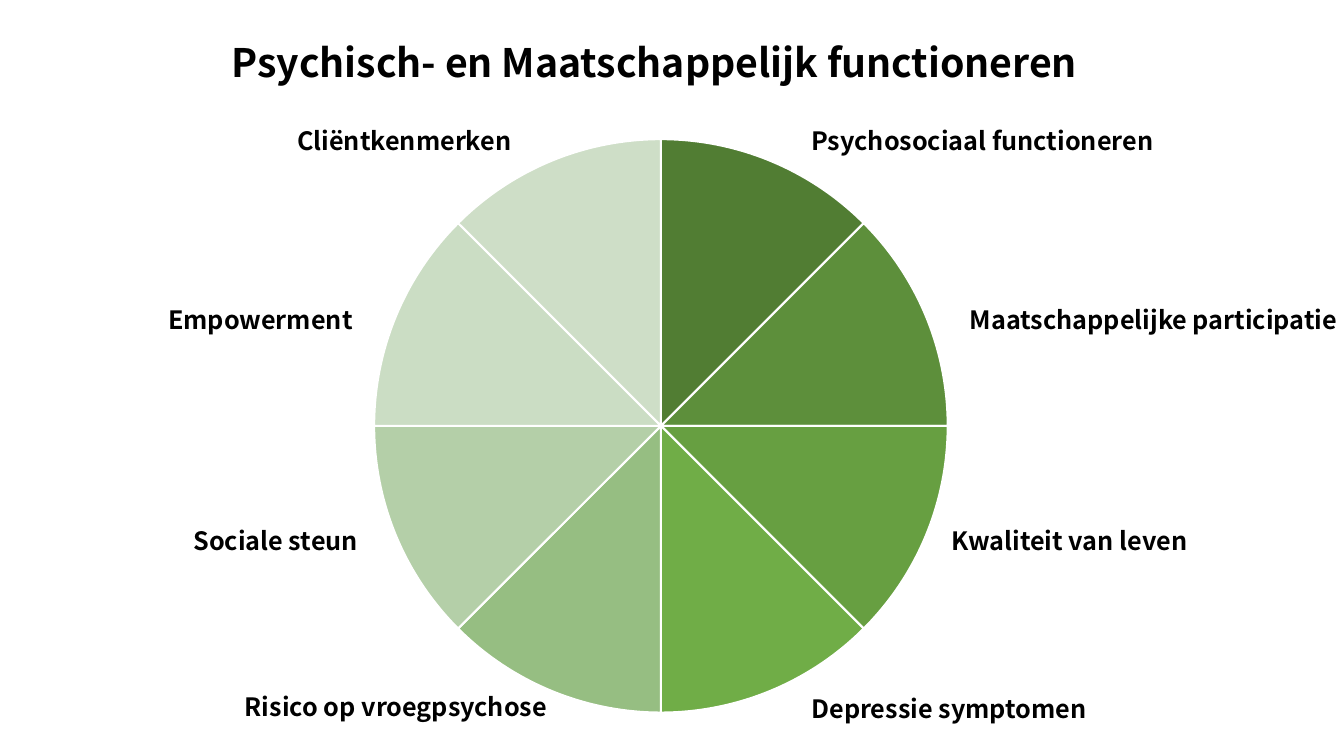
from dataclasses import dataclass
from lxml.etree import SubElement
from pptx import Presentation
from pptx.chart.data import CategoryChartData as Data
from pptx.dml.color import RGBColor as Rgb
from pptx.enum.chart import XL_CHART_TYPE as Kind
from pptx.enum.text import MSO_ANCHOR as Anchor, MSO_AUTO_SIZE as Fit, PP_ALIGN as Align
from pptx.oxml.ns import qn
from pptx.util import Inches, Pt


@dataclass(frozen=True)
class Theme:
    font: str = "Noto Sans CJK TC"
    base: str = "Calibri"
    ink: str = "000000"
    edge: str = "FFFFFF"
    head: int = 28
    label: int = 18
    small: int = 10
    line: float = 1.5
    greens: tuple = ("517D33", "5D8F3B", "679F41", "70AD47",
                     "96BE82", "B4CFA8", "CBDDC4", "CEDEC7")


class Deck:
    def __init__(self, theme):
        self.theme = theme
        self.show = Presentation()
        self.show.slide_width = Inches(13.33)
        self.show.slide_height = Inches(7.5)
        self.slide = self.show.slides.add_slide(self.show.slide_layouts[5])

    def place(self, left, top, width, height):
        across = self.show.slide_width / 100
        down = self.show.slide_height / 100
        return [int(n) for n in (left * across, top * down, width * across, height * down)]

    def style(self, shape, text, size):
        frame = shape.text_frame
        frame.text = text
        frame.word_wrap = True
        frame.auto_size = Fit.NONE
        frame.vertical_anchor = Anchor.MIDDLE
        frame.margin_right = 0
        line = frame.paragraphs[0]
        line.alignment = Align.LEFT
        font = line.runs[0].font
        font.name = self.theme.font
        font.size = Pt(size)
        font.bold = True
        font.color.rgb = Rgb.from_string(self.theme.ink)

    def title(self, text, *box):
        shape = self.slide.shapes.title
        shape.left, shape.top, shape.width, shape.height = self.place(*box)
        self.style(shape, text, self.theme.head)

    def label(self, text, *box):
        shape = self.slide.shapes.add_textbox(*self.place(*box))
        self.style(shape, text, self.theme.label)

    def pie(self, value, plot, *box):
        greens = self.theme.greens
        data = Data()
        data.categories = [str(n + 1) for n in range(len(greens))]
        data.add_series("Series 1", [value] * len(greens))
        chart = self.slide.shapes.add_chart(Kind.PIE, *self.place(*box), data).chart
        chart.has_legend = False
        chart.has_title = False
        chart.font.name = self.theme.base
        chart.font.size = Pt(self.theme.small)
        chart.font.color.rgb = Rgb.from_string(self.theme.ink)
        for index, green in enumerate(greens):
            form = chart.plots[0].series[0].points[index].format
            form.fill.solid()
            form.fill.fore_color.rgb = Rgb.from_string(green)
            form.line.color.rgb = Rgb.from_string(self.theme.edge)
            form.line.width = Pt(self.theme.line)
        self.inset(chart, plot)

    def inset(self, chart, plot):
        area = chart._chartSpace.find(".//" + qn("c:plotArea"))
        for old in area.findall(qn("c:layout")):
            area.remove(old)
        layout = SubElement(area, qn("c:layout"))
        area.insert(0, layout)
        manual = SubElement(layout, qn("c:manualLayout"))
        rules = [("layoutTarget", "inner"), ("xMode", "edge"), ("yMode", "edge")]
        for tag, val in rules + list(zip("xywh", plot)):
            SubElement(manual, qn("c:" + tag)).set("val", str(val))


def main():
    deck = Deck(Theme())
    deck.title("Psychisch- en Maatschappelijk functioneren", 16.5, 4.4, 81.32, 7.6)
    deck.pie(12, (0.17, 0.01, 0.64, 0.97), 16.5, 17.2, 66.69, 79.07)
    tall, wide = 5.33, 28.5
    rows = (15.87, 39.6, 68.8, 91.07)
    right = (("Psychosociaal functioneren", 59.64),
             ("Maatschappelijke participatie", 71.42),
             ("Kwaliteit van leven", 70.07),
             ("Depressie symptomen", 59.64))
    left = (("Cliëntkenmerken", 21.38, 20.03),
            ("Empowerment", 11.78, 18.23),
            ("Sociale steun", 13.65, 14.55),
            ("Risico op vroegpsychose", 17.48, 27.16))
    for row, (text, start) in zip(rows, right):
        deck.label(text, start, row, wide, tall)
    for row, (text, start, span) in zip(rows[:3] + (90.8,), left):
        deck.label(text, start, row, span, tall)
    deck.show.save("out.pptx")


if __name__ == "__main__":
    main()
